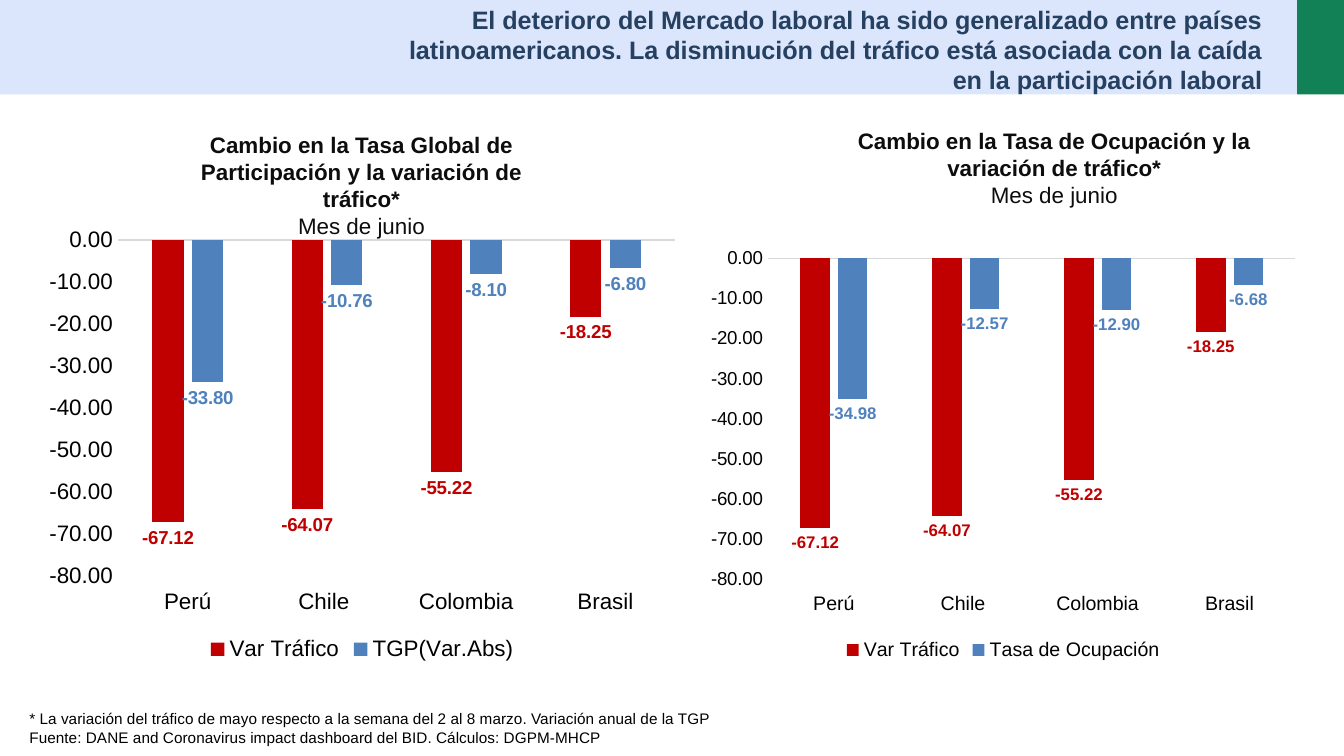
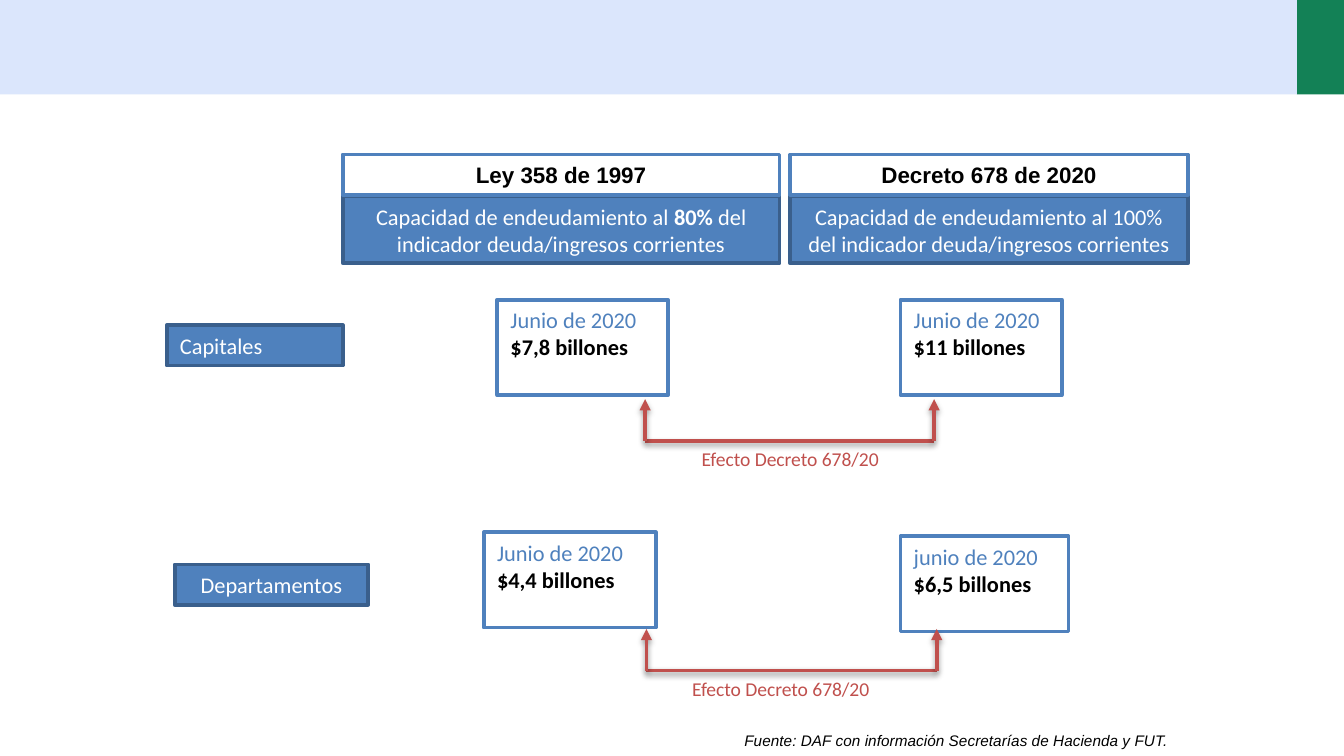
"""Builds two slides: labour market and traffic, and territorial debt capacity."""
from lxml.etree import SubElement
from pptx import Presentation
from pptx.chart.data import CategoryChartData
from pptx.dml.color import RGBColor
from pptx.enum.chart import (XL_CHART_TYPE, XL_LABEL_POSITION, XL_LEGEND_POSITION,
                             XL_TICK_LABEL_POSITION, XL_TICK_MARK)
from pptx.enum.shapes import MSO_CONNECTOR, MSO_SHAPE
from pptx.enum.text import MSO_ANCHOR, PP_ALIGN
from pptx.oxml.ns import qn
from pptx.util import Inches, Pt

WIDTH = 10
HEIGHT = WIDTH * 9 / 16
BAND_HEIGHT, BAND_SPLIT = HEIGHT / 8, 9.65
GREEN, PALE, NAVY = "138156", "DBE6FC", "254061"
BLUE, EDGE, RED, BAR_RED = "4F81BD", "3A5F8C", "C0504D", "C00000"
BLACK, INK, WHITE, GREY = "000000", "0D0D0D", "FFFFFF", "D9D9D9"
LEFT, CENTER, RIGHT = PP_ALIGN.LEFT, PP_ALIGN.CENTER, PP_ALIGN.RIGHT
NOTE_SIZE = 8.25

HEADLINE = ("El deterioro del Mercado laboral ha sido generalizado entre países "
            "latinoamericanos. La disminución del tráfico está asociada con la caída "
            "en la participación laboral")
NOTES = ["* La variación del tráfico de mayo respecto a la semana del 2 al 8 marzo. "
         "Variación anual de la TGP",
         "Fuente: DANE and Coronavirus impact dashboard del BID. Cálculos: DGPM-MHCP"]
COUNTRIES = ["Perú", "Chile ", "Colombia", "Brasil"]
TRAFFIC = ("Var Tráfico", [-67.12, -64.07, -55.22, -18.25])
MONTH = "Mes de junio"
PANELS = [
    {"heading": "Cambio en la Tasa Global de Participación y la variación de tráfico*",
     "heading_at": (1.1, 0.93, 3.18, 1.11), "chart_at": (0.27, 1.63, 4.85, 3.33),
     "measure": ("TGP(Var.Abs)", [-33.8, -10.76, -8.1, -6.8]),
     "category_size": 12, "value_size": 12, "label_size": 10},
    {"heading": "Cambio en la Tasa de Ocupación y la variación de tráfico*",
     "heading_at": (6.28, 0.9, 3.13, 0.91), "chart_at": (5.2, 1.78, 4.53, 3.18),
     "measure": ("Tasa de Ocupación", [-34.98, -12.57, -12.9, -6.68]),
     "category_size": 10.5, "value_size": 10, "label_size": 9},
]

LAW_TOP, LAW_HEIGHT, RULE_TOP, RULE_HEIGHT = 1.15, 0.3, 1.46, 0.5
LAWS = [
    ("Ley 358 de 1997", 2.55, 3.25,
     [("Capacidad de endeudamiento al ", False), ("80%", True),
      (" del indicador deuda/ingresos corrientes", False)]),
    ("Decreto 678 de 2020", 5.88, 2.96,
     [("Capacidad de endeudamiento al 100% del indicador deuda/ingresos corrientes", False)]),
]
AMOUNT_HEIGHT, ARROW_RISE, EFFECT_SIZE = 0.71, 0.31, (2.16, 0.28)
EFFECT = "Efecto Decreto 678/20"
LEVELS = [
    {"level": ("Capitales", LEFT, (1.24, 2.42, 1.31, 0.3)),
     "amounts": [("Junio de 2020", "$7,8 billones", 3.7, 2.23, 1.27),
                 ("Junio de 2020", "$11 billones", 6.7, 2.23, 1.2)],
     "bracket": (4.8, 6.95, 3.28), "effect_left": 4.8},
    {"level": ("Departamentos", CENTER, (1.3, 4.2, 1.44, 0.3)),
     "amounts": [("Junio de 2020", "$4,4 billones", 3.6, 3.96, 1.28),
                 ("junio de 2020", "$6,5 billones", 6.7, 3.99, 1.25)],
     "bracket": (4.81, 6.97, 4.99), "effect_left": 4.73},
]
SOURCE = "Fuente: DAF con información Secretarías de Hacienda y FUT."


def color(code):
    return RGBColor.from_string(code)


def style(font, size, code, face="Arial", bold=False, italic=False):
    font.size, font.name, font.bold, font.italic = Pt(size), face, bold, italic
    font.color.rgb = color(code)


def run(text, size, code, face="Arial", bold=False, italic=False):
    return text, (size, code, face, bold, italic)


def write(holder, paragraphs, align=LEFT, wrap=True):
    frame = holder.text_frame
    frame.word_wrap, frame.vertical_anchor = wrap, MSO_ANCHOR.TOP
    for index, runs in enumerate(paragraphs):
        paragraph = frame.add_paragraph() if index else frame.paragraphs[0]
        paragraph.alignment = align
        for text, look in runs:
            piece = paragraph.add_run()
            piece.text = text
            style(piece.font, *look)


def add_text(slide, at, paragraphs, align=LEFT, wrap=True):
    write(slide.shapes.add_textbox(*map(Inches, at)), paragraphs, align, wrap)


def add_box(slide, at, fill, edge=None, paragraphs=(), align=LEFT):
    box = slide.shapes.add_shape(MSO_SHAPE.RECTANGLE, *map(Inches, at))
    box.shadow.inherit = False
    box.fill.solid()
    box.fill.fore_color.rgb = color(fill)
    if edge:
        box.line.color.rgb, box.line.width = color(edge), Pt(2)
    else:
        box.line.fill.background()
    write(box, paragraphs, align)


def add_line(slide, start, end, arrow=False):
    line = slide.shapes.add_connector(MSO_CONNECTOR.STRAIGHT, *map(Inches, start + end))
    line.line.color.rgb, line.line.width = color(RED), Pt(2)
    if arrow:
        SubElement(line.line._get_or_add_ln(), qn("a:tailEnd"), type="triangle")
    effects = SubElement(line._element.spPr, qn("a:effectLst"))
    shadow = SubElement(effects, qn("a:outerShdw"), blurRad=str(Pt(3.1)),
                        dist=str(Pt(1.6)), dir="5400000", rotWithShape="0")
    tint = SubElement(shadow, qn("a:srgbClr"), val=BLACK)
    SubElement(tint, qn("a:alpha"), val="38000")


def add_bracket(slide, left, right, bottom):
    add_line(slide, (left, bottom), (right, bottom))
    for x in (right, left):
        add_line(slide, (x, bottom), (x, bottom - ARROW_RISE), arrow=True)


def add_banded_slide(deck):
    slide = deck.slides.add_slide(deck.slide_layouts[6])
    add_box(slide, (BAND_SPLIT, 0, WIDTH - BAND_SPLIT, BAND_HEIGHT), GREEN)
    add_box(slide, (0, 0, BAND_SPLIT, BAND_HEIGHT), PALE)
    return slide


def add_bars(slide, panel):
    content = CategoryChartData(number_format="0.00")
    content.categories = COUNTRIES
    for name, values in (TRAFFIC, panel["measure"]):
        content.add_series(name, values)
    chart = slide.shapes.add_chart(XL_CHART_TYPE.COLUMN_CLUSTERED,
                                   *map(Inches, panel["chart_at"]), content).chart
    chart.has_title = False
    style(chart.font, panel["value_size"], BLACK)
    chart.has_legend = True
    chart.legend.position = XL_LEGEND_POSITION.BOTTOM
    chart.legend.include_in_layout = False
    style(chart.legend.font, panel["category_size"], BLACK)

    countries, scale = chart.category_axis, chart.value_axis
    for axis, size in ((countries, panel["category_size"]), (scale, panel["value_size"])):
        axis.major_tick_mark = axis.minor_tick_mark = XL_TICK_MARK.NONE
        axis.has_major_gridlines = False
        style(axis.tick_labels.font, size, BLACK)
    countries.tick_label_position = XL_TICK_LABEL_POSITION.LOW
    countries.format.line.color.rgb = color(GREY)
    countries.format.line.width = Pt(0.75)
    scale.format.line.fill.background()
    scale.tick_labels.number_format = "0.00"
    scale.tick_labels.number_format_is_linked = False

    plot = chart.plots[0]
    plot.gap_width, plot.overlap, plot.vary_by_categories = 219, -27, False
    for series, code in zip(plot.series, (BAR_RED, BLUE)):
        series.invert_if_negative = False
        series.format.fill.solid()
        series.format.fill.fore_color.rgb = color(code)
        labels = series.data_labels
        labels.show_value = True
        labels.number_format, labels.number_format_is_linked = "0.00", False
        labels.position = XL_LABEL_POSITION.OUTSIDE_END
        style(labels.font, panel["label_size"], code, bold=True)


def build_labour(deck):
    slide = add_banded_slide(deck)
    add_text(slide, (0.12, 5.23, 6.05, 0.38),
             [[run(note, NOTE_SIZE, BLACK)] for note in NOTES])
    add_text(slide, (2.85, -0.02, 6.64, 0.78),
             [[run(HEADLINE, 13.5, NAVY, bold=True)]], RIGHT)
    for panel in PANELS:
        add_text(slide, panel["heading_at"],
                 [[run(panel["heading"], 12, INK, bold=True)], [run(MONTH, 12, INK)]], CENTER)
        add_bars(slide, panel)


def build_debt(deck):
    slide = add_banded_slide(deck)
    add_text(slide, (5.44, 5.39, 3.4, 0.24),
             [[run(SOURCE, NOTE_SIZE, BLACK, italic=True)]], wrap=False)
    for law, left, width, rule in LAWS:
        add_box(slide, (left, RULE_TOP, width, RULE_HEIGHT), BLUE, EDGE,
                [[run(text, 12, WHITE, "Calibri", bold) for text, bold in rule]], CENTER)
        add_box(slide, (left, LAW_TOP, width, LAW_HEIGHT), WHITE, BLUE,
                [[run(law, 12, BLACK, bold=True)]], CENTER)
    for row in LEVELS:
        level, align, at = row["level"]
        add_box(slide, at, BLUE, EDGE, [[run(level, 12, WHITE, "Calibri")]], align)
        for date, amount, left, top, width in row["amounts"]:
            add_box(slide, (left, top, width, AMOUNT_HEIGHT), WHITE, BLUE,
                    [[run(date, 12, BLUE, "Calibri")],
                     [run(amount, 12, BLACK, "Calibri", True)]])
        add_bracket(slide, *row["bracket"])
        add_text(slide, (row["effect_left"], row["bracket"][2], *EFFECT_SIZE),
                 [[run(EFFECT, 10.5, RED, "Calibri")]], CENTER)


def main():
    deck = Presentation()
    deck.slide_width, deck.slide_height = Inches(WIDTH), Inches(HEIGHT)
    build_labour(deck)
    build_debt(deck)
    deck.save("out.pptx")


if __name__ == "__main__":
    main()
